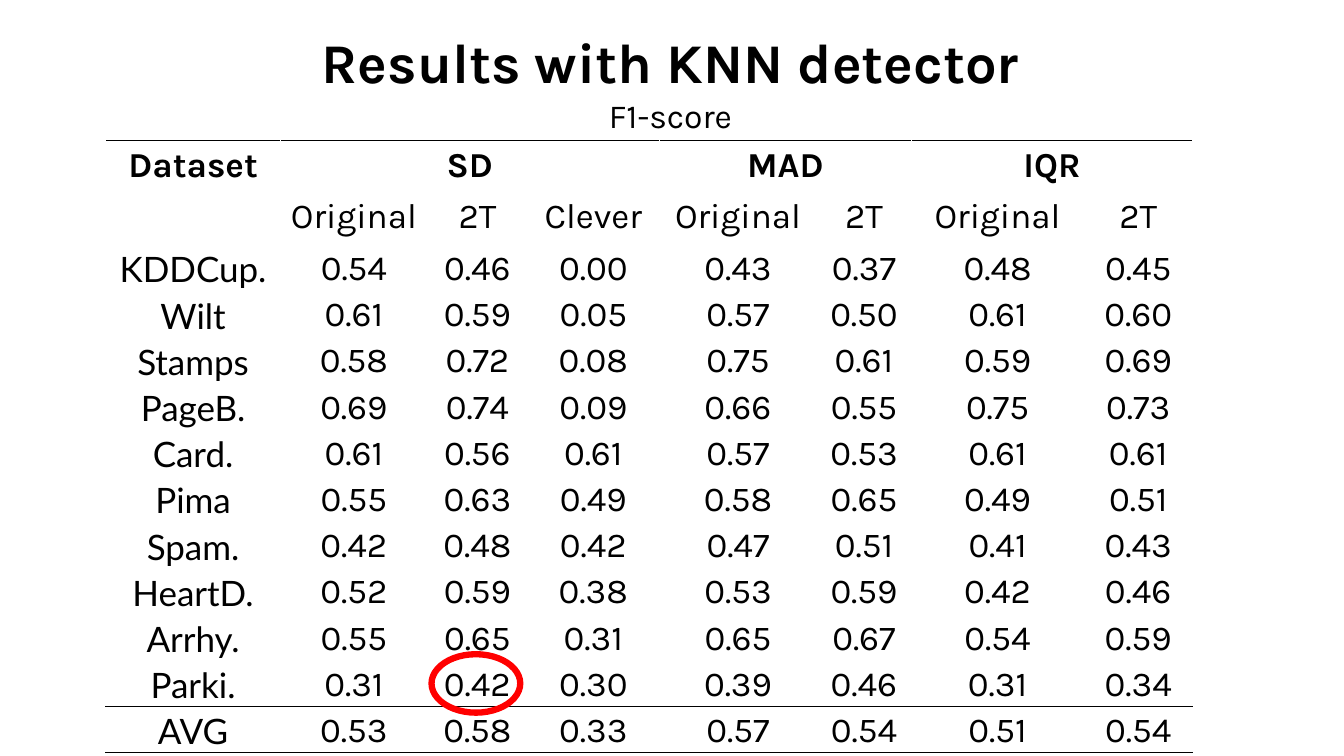
from lxml.etree import SubElement
from pptx import Presentation
from pptx.dml.color import RGBColor
from pptx.enum.shapes import MSO_SHAPE
from pptx.enum.text import MSO_ANCHOR, MSO_AUTO_SIZE, PP_ALIGN
from pptx.oxml.ns import qn
from pptx.util import Inches, Pt

HEADING = [("Results with KNN detector", 40, True), ("F1-score", 24, False)]
DETECTORS = [("SD", ["Original", "2T", "Clever"]),
             ("MAD", ["Original", "2T"]),
             ("IQR", ["Original", "2T"])]
SCORES = [
    ("KDDCup.", "0.54", "0.46", "0.00", "0.43", "0.37", "0.48", "0.45"),
    ("Wilt", "0.61", "0.59", "0.05", "0.57", "0.50", "0.61", "0.60"),
    ("Stamps", "0.58", "0.72", "0.08", "0.75", "0.61", "0.59", "0.69"),
    ("PageB.", "0.69", "0.74", "0.09", "0.66", "0.55", "0.75", "0.73"),
    ("Card.", "0.61", "0.56", "0.61", "0.57", "0.53", "0.61", "0.61"),
    ("Pima", "0.55", "0.63", "0.49", "0.58", "0.65", "0.49", "0.51"),
    ("Spam.", "0.42", "0.48", "0.42", "0.47", "0.51", "0.41", "0.43"),
    ("HeartD.", "0.52", "0.59", "0.38", "0.53", "0.59", "0.42", "0.46"),
    ("Arrhy.", "0.55", "0.65", "0.31", "0.65", "0.67", "0.54", "0.59"),
    ("Parki.", "0.31", "0.42", "0.30", "0.39", "0.46", "0.31", "0.34"),
    ("AVG", "0.53", "0.58", "0.33", "0.57", "0.54", "0.51", "0.54"),
]
COLUMN_WIDTHS = [1.73, 1.46, 0.99, 1.31, 1.56, 0.94, 1.71, 1.08]
ROW_HEIGHT, SUBHEADER_HEIGHT = 0.41, 0.51
COLORS = {"ink": "000000", "highlight": "FF0000"}


def color(name):
    return RGBColor.from_string(COLORS[name])


def add_run(paragraph, text, size, bold=False, font="Karla"):
    paragraph.alignment = PP_ALIGN.CENTER
    run = paragraph.add_run()
    run.text = text
    run.font.name = font
    run.font.size = Pt(size)
    run.font.bold = bold
    run.font.color.rgb = color("ink")


def fill_cell(cell, text, font="Karla"):
    """Write a regular cell: no margins, slightly open line spacing."""
    cell.margin_left = cell.margin_right = cell.margin_top = cell.margin_bottom = 0
    paragraph = cell.text_frame.paragraphs[0]
    paragraph.line_spacing = 1.1
    add_run(paragraph, text, 25, font=font)


def rule_cell(cell, sides):
    """Draw black rules; borders must precede the fill in tcPr."""
    properties = cell._tc.get_or_add_tcPr()
    for position, side in enumerate(sides):
        line = SubElement(properties, qn(f"a:ln{side}"), w=str(Pt(1)))
        fill = SubElement(line, qn("a:solidFill"))
        SubElement(fill, qn("a:srgbClr"), val=COLORS["ink"])
        properties.insert(position, line)


def add_heading(slide):
    title = slide.shapes.title
    title.left, title.top, title.width, title.height = map(Inches, (2.1, 0.22, 9.1, 1.17))
    frame = title.text_frame
    frame.word_wrap = True
    frame.auto_size = MSO_AUTO_SIZE.SHAPE_TO_FIT_TEXT
    frame.vertical_anchor = MSO_ANCHOR.MIDDLE
    for index, (text, size, bold) in enumerate(HEADING):
        paragraph = frame.add_paragraph() if index else frame.paragraphs[0]
        add_run(paragraph, text, size, bold)


def add_scores(slide):
    row_count = len(SCORES) + 2
    table = slide.shapes.add_table(
        row_count, len(COLUMN_WIDTHS), Inches(1.05), Inches(1.39),
        Inches(sum(COLUMN_WIDTHS)), Inches(ROW_HEIGHT * row_count)).table
    table.first_row = table.horz_banding = False
    for column, width in zip(table.columns, COLUMN_WIDTHS):
        column.width = Inches(width)
    for row in table.rows:
        row.height = Inches(ROW_HEIGHT)
    table.rows[1].height = Inches(SUBHEADER_HEIGHT)

    table.cell(0, 0).merge(table.cell(1, 0))
    add_run(table.cell(0, 0).text_frame.paragraphs[0], "Dataset", 25, True)
    first = 1
    for detector, variants in DETECTORS:
        group = table.cell(0, first)
        group.merge(table.cell(0, first + len(variants) - 1))
        add_run(group.text_frame.paragraphs[0], detector, 25, True)
        for offset, variant in enumerate(variants):
            fill_cell(table.cell(1, first + offset), variant)
        first += len(variants)

    for row, values in enumerate(SCORES, start=2):
        for column, value in enumerate(values):
            fill_cell(table.cell(row, column), value, "Karla" if column else "Lato")

    ruled_sides = {0: "T", row_count - 2: "B", row_count - 1: "TB"}
    for row in range(row_count):
        for column in range(len(COLUMN_WIDTHS)):
            cell = table.cell(row, column)
            cell.fill.background()
            rule_cell(cell, ruled_sides.get(row, ""))


def add_highlight(slide):
    ring = slide.shapes.add_shape(
        MSO_SHAPE.OVAL, Inches(4.28), Inches(6.49), Inches(0.88), Inches(0.58))
    ring.shadow.inherit = False
    ring.fill.background()
    ring.line.color.rgb = color("highlight")
    ring.line.width = Pt(4.5)


def main():
    presentation = Presentation()
    presentation.slide_width = Inches(13.33)
    presentation.slide_height = Inches(7.5)
    slide = presentation.slides.add_slide(presentation.slide_layouts[5])
    add_heading(slide)
    add_scores(slide)
    add_highlight(slide)
    presentation.save("out.pptx")


if __name__ == "__main__":
    main()
